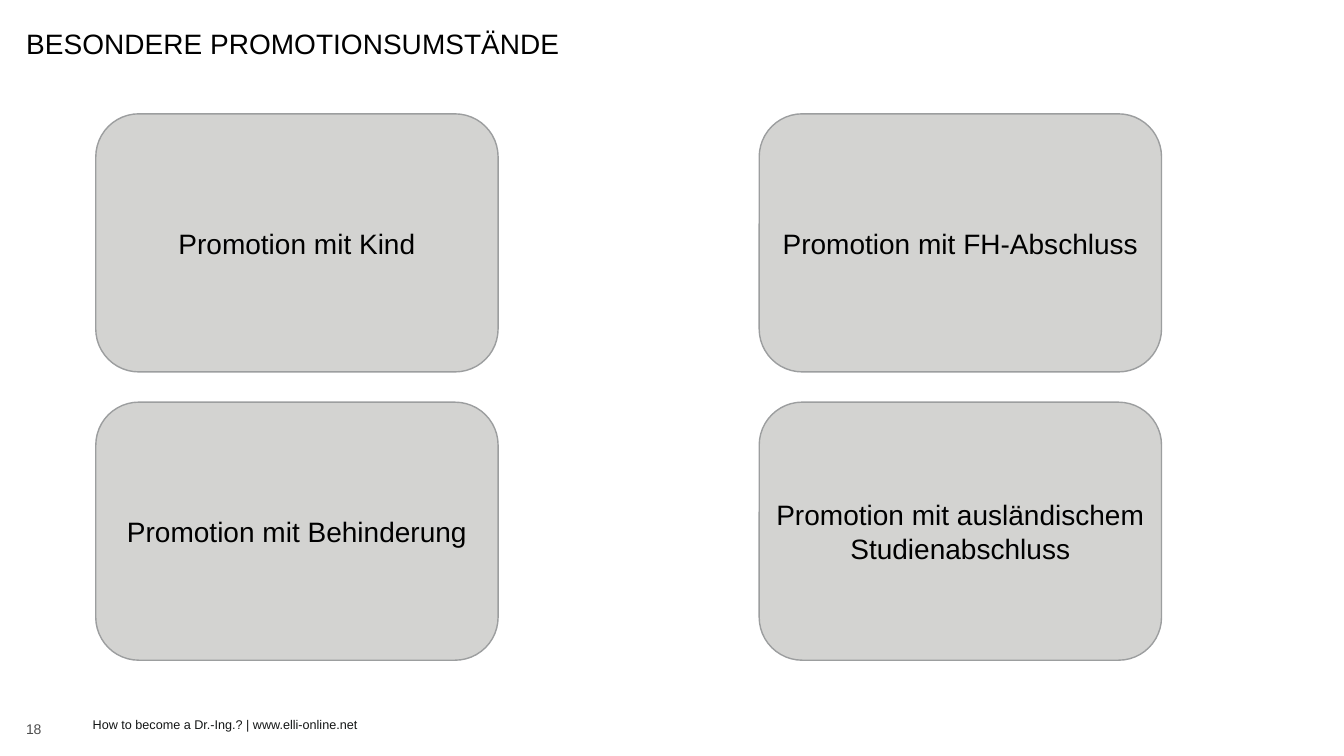
from pptx import Presentation
from pptx.dml.color import RGBColor
from pptx.enum.shapes import MSO_SHAPE
from pptx.enum.text import MSO_ANCHOR, PP_ALIGN
from pptx.util import Inches, Pt

BLACK = RGBColor(0x00, 0x00, 0x00)
FOOTER_INK = RGBColor(0x14, 0x16, 0x16)
NUMBER_GRAY = RGBColor(0x4D, 0x4D, 0x4D)
CARD_FILL = RGBColor(0xD3, 0xD3, 0xD1)
CARD_LINE = RGBColor(0x9C, 0x9E, 0x9F)

CARD_WIDTH, CARD_HEIGHT = 3.99, 2.56
CARD_LEFTS = (0.95, 7.53)
CARD_TOPS = (1.13, 3.99)
CARD_TEXTS = (
    ("Promotion mit Kind", "Promotion mit FH-Abschluss"),
    ("Promotion mit Behinderung", "Promotion mit ausländischem\nStudienabschluss"),
)


def write_text(shape, text, size, color, alignment=PP_ALIGN.LEFT):
    frame = shape.text_frame
    frame.text = text
    frame.vertical_anchor = MSO_ANCHOR.MIDDLE
    for paragraph in frame.paragraphs:
        paragraph.alignment = alignment
        for run in paragraph.runs:
            run.font.name = "Arial"
            run.font.size = Pt(size)
            run.font.color.rgb = color
    return frame


deck = Presentation()
deck.slide_width, deck.slide_height = Inches(13.33), Inches(7.5)
page = deck.slides.add_slide(deck.slide_layouts[5])

title = page.shapes.title
title.left, title.top = Inches(0.16), Inches(0.22)
title.width, title.height = Inches(9.37), Inches(0.39)
title_frame = write_text(title, "BESONDERE PROMOTIONSUMSTÄNDE", 20, BLACK)
title_frame.paragraphs[0].line_spacing = 1.1

for top, row_texts in zip(CARD_TOPS, CARD_TEXTS):
    for left, text in zip(CARD_LEFTS, row_texts):
        card = page.shapes.add_shape(
            MSO_SHAPE.ROUNDED_RECTANGLE,
            Inches(left), Inches(top), Inches(CARD_WIDTH), Inches(CARD_HEIGHT),
        )
        card.shadow.inherit = False
        card.fill.solid()
        card.fill.fore_color.rgb = CARD_FILL
        card.line.color.rgb = CARD_LINE
        card.line.width = Pt(1)
        card_frame = write_text(card, text, 20, BLACK, PP_ALIGN.CENTER)
        card_frame.word_wrap = False

footer = page.shapes.add_textbox(Inches(0.92), Inches(7), Inches(7.56), Inches(0.37))
footer_frame = write_text(
    footer, "How to become a Dr.-Ing.? | www.elli-online.net", 9, FOOTER_INK
)
footer_frame.word_wrap = True
footer_frame.margin_left = footer_frame.margin_right = 0
footer_frame.margin_top = footer_frame.margin_bottom = 0

page_number = page.shapes.add_textbox(
    Inches(0.16), Inches(7.11), Inches(1.07), Inches(0.24)
)
write_text(page_number, "18", 10, NUMBER_GRAY).word_wrap = True

deck.save("out.pptx")
